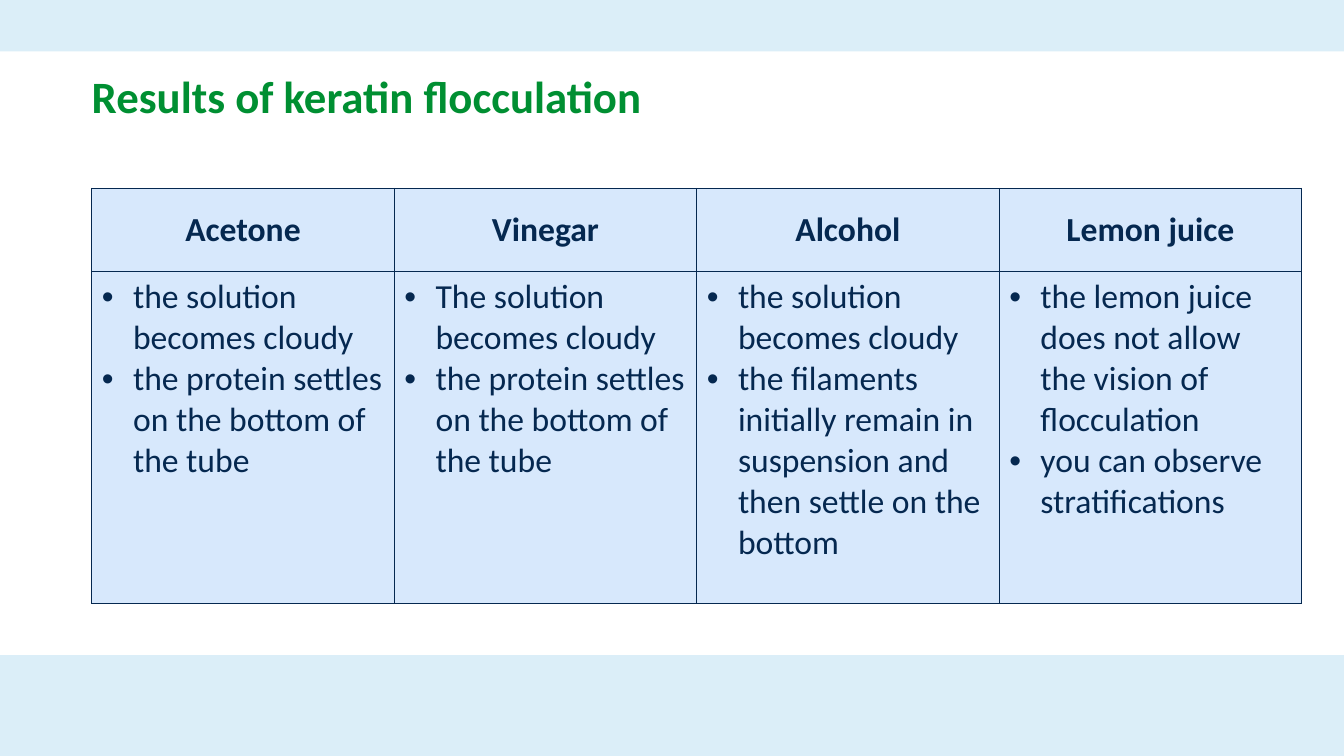
from lxml import etree
from pptx import Presentation
from pptx import util as u
from pptx.dml.color import RGBColor
from pptx.enum import shapes, text
from pptx.oxml import ns

BAND, GREEN, NAVY, PALE = "DBEEF8", "008F32", "052850", "D7E8FC"
SETTLE = "the protein settles on the bottom of the tube"
RESULTS = {
    "Acetone": ["the solution becomes cloudy", SETTLE],
    "Vinegar": ["The solution becomes cloudy", SETTLE],
    "Alcohol": [
        "the solution becomes cloudy",
        "the filaments initially remain in suspension and then settle on the bottom",
    ],
    "Lemon juice": [
        "the lemon juice does not allow the vision of flocculation",
        "you can observe stratifications",
    ],
}


def paint(fill, color):
    fill.solid()
    fill.fore_color.rgb = RGBColor.from_string(color)


def style(para, color, **form):
    for key, value in {"name": "Calibri", **form}.items():
        setattr(para.font, key, value)
    paint(para.font.fill, color)


def band(slide, top, height):
    box = slide.shapes.add_shape(
        shapes.MSO_SHAPE.RECTANGLE, 0, u.Inches(top), u.Inches(13.33), u.Inches(height))
    box.shadow.inherit = False
    box.line.fill.background()
    paint(box.fill, BAND)


def head(slide, words):
    title = slide.shapes.title
    title.left, title.top = u.Inches(0.91), u.Inches(0.51)
    title.width, title.height = u.Inches(9.89), u.Inches(0.95)
    frame = title.text_frame
    frame.text = words
    form = {"margin_left": 0, "margin_right": 0, "margin_top": 0, "margin_bottom": 0,
            "word_wrap": True, "auto_size": text.MSO_AUTO_SIZE.NONE,
            "vertical_anchor": text.MSO_ANCHOR.MIDDLE}
    for key, value in form.items():
        setattr(frame, key, value)
    para = frame.paragraphs[0]
    para.alignment = text.PP_ALIGN.LEFT
    para.line_spacing = 0.9
    style(para, GREEN, size=u.Pt(32), bold=True)


def border(cell):
    props = cell._tc.get_or_add_tcPr()
    for spot, side in enumerate(("lnL", "lnR", "lnT", "lnB")):
        line = etree.Element(ns.qn(f"a:{side}"), w=str(u.Pt(1)))
        solid = etree.SubElement(line, ns.qn("a:solidFill"))
        etree.SubElement(solid, ns.qn("a:srgbClr"), val=NAVY)
        props.insert(spot, line)


def bullet(para):
    props = para._p.get_or_add_pPr()
    dent = u.Inches(0.31)
    props.set("marL", str(dent))
    props.set("indent", str(-dent))
    etree.SubElement(props, ns.qn("a:buFont"), typeface="Arial")
    etree.SubElement(props, ns.qn("a:buChar"), char="•")


def fill_cell(cell, lines, top):
    """Write a heading cell if top is true, else a bulleted one."""
    paint(cell.fill, PALE)
    border(cell)
    cell.text = "\n".join(lines)
    if top:
        cell.vertical_anchor = text.MSO_ANCHOR.MIDDLE
    for para in cell.text_frame.paragraphs:
        if top:
            para.alignment = text.PP_ALIGN.CENTER
        else:
            bullet(para)
        style(para, NAVY, size=u.Pt(24), bold=top)


def grid(slide, data):
    table = slide.shapes.add_table(
        2, len(data), u.Inches(0.91), u.Inches(1.87), u.Inches(12), u.Inches(4.12)).table
    table.horz_banding = False
    for row, height in zip(table.rows, (0.82, 3.3)):
        row.height = u.Inches(height)
    for col, (name, notes) in enumerate(data.items()):
        fill_cell(table.cell(0, col), [name], True)
        fill_cell(table.cell(1, col), notes, False)


def main():
    deck = Presentation()
    deck.slide_width, deck.slide_height = u.Inches(13.33), u.Inches(7.5)
    slide = deck.slides.add_slide(deck.slide_layouts[5])
    band(slide, 6.5, 1)
    band(slide, 0, 0.51)
    head(slide, "Results of keratin flocculation")
    grid(slide, RESULTS)
    deck.save("out.pptx")


if __name__ == "__main__":
    main()
